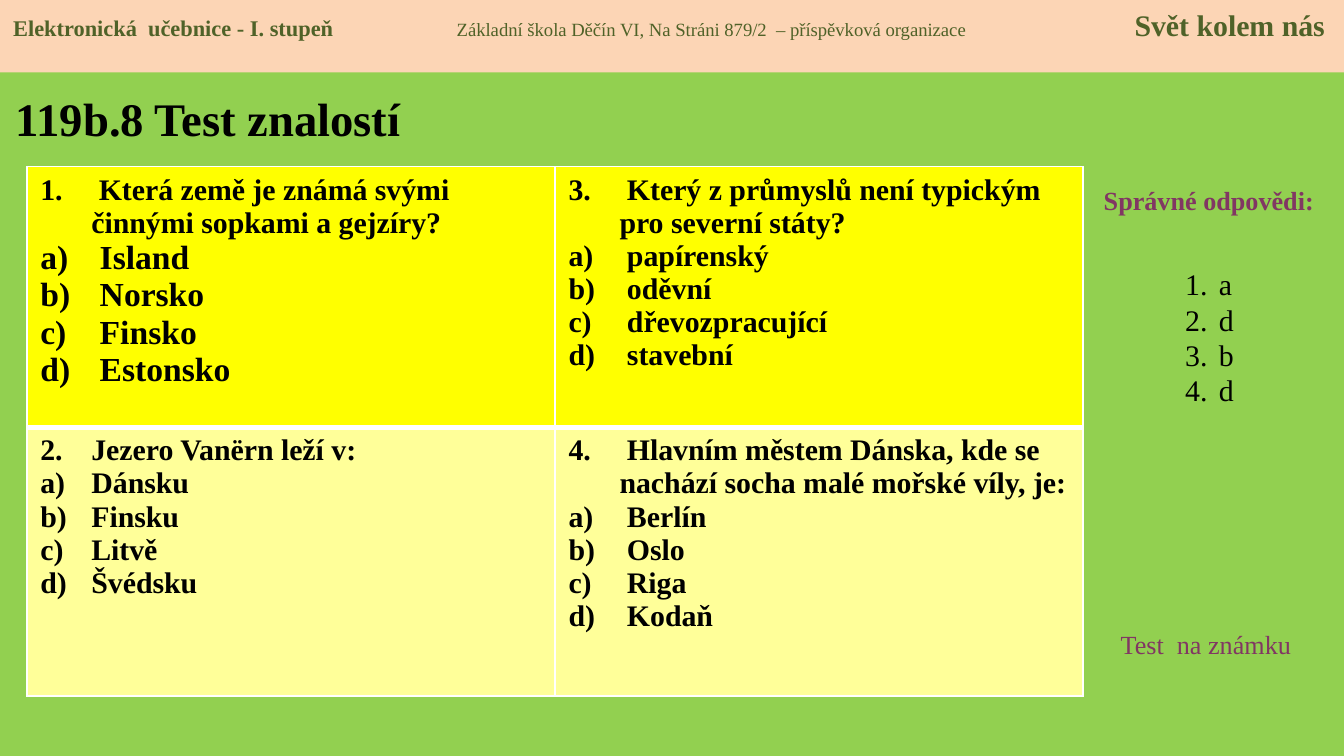
from dataclasses import dataclass

from lxml import etree
from pptx import Presentation
from pptx.dml.color import RGBColor
from pptx.enum.shapes import MSO_SHAPE
from pptx.enum.text import MSO_ANCHOR, PP_ALIGN
from pptx.oxml.ns import qn
from pptx.util import Inches, Pt

RECTANGLE = MSO_SHAPE.RECTANGLE
LEFT, CENTER = PP_ALIGN.LEFT, PP_ALIGN.CENTER
TOP, MIDDLE = MSO_ANCHOR.TOP, MSO_ANCHOR.MIDDLE


@dataclass(frozen=True)
class Theme:
    font: str = "Times New Roman"
    background: str = "92D050"
    band: str = "FCD5B5"
    band_text: str = "4F6228"
    text: str = "000000"
    accent: str = "813763"
    border: str = "FFFFFF"
    row_fills: tuple = ("FFFF00", "FFFF99")
    title_size: int = 25
    large_size: int = 18
    body_size: int = 16
    label_size: int = 14
    school_size: int = 10
    book_size: int = 12


THEME = Theme()

# Each question: wording, options, option size
QUESTIONS = [
    [
        (" Která země je známá svými činnými sopkami a gejzíry?",
         [" Island", " Norsko", " Finsko", " Estonsko"], THEME.large_size),
        (" Který z průmyslů není typickým pro severní státy?",
         [" papírenský", " oděvní", " dřevozpracující", " stavební"], THEME.body_size),
    ],
    [
        ("Jezero Vanërn leží v:",
         ["Dánsku", "Finsku", "Litvě", "Švédsku"], THEME.body_size),
        (" Hlavním městem Dánska, kde se nachází socha malé mořské víly, je:",
         [" Berlín", " Oslo", " Riga", " Kodaň"], THEME.body_size),
    ],
]
ANSWERS = ["a", "d", "b", "d"]


def add_run(paragraph, text, size, color=THEME.text, bold=False):
    run = paragraph.add_run()
    run.text = text
    run.font.name = THEME.font
    run.font.size = Pt(size)
    run.font.bold = bold
    run.font.color.rgb = RGBColor.from_string(color)


def set_number(paragraph, style, indent, start=1):
    properties = paragraph._p.get_or_add_pPr()
    properties.set("marL", str(Inches(indent)))
    properties.set("indent", str(-Inches(indent)))
    number = etree.SubElement(properties, qn("a:buAutoNum"), type=style)
    if start > 1:
        number.set("startAt", str(start))


def set_tabs(paragraph, stops):
    tabs = etree.SubElement(paragraph._p.get_or_add_pPr(), qn("a:tabLst"))
    for position, alignment in stops:
        etree.SubElement(tabs, qn("a:tab"), pos=str(Inches(position)), algn=alignment)


def set_borders(cell, top, bottom):
    properties = cell._tc.get_or_add_tcPr()
    widths = {"a:lnL": 1, "a:lnR": 1, "a:lnT": top, "a:lnB": bottom}
    for index, (tag, width) in enumerate(widths.items()):
        line = etree.Element(qn(tag), w=str(Pt(width)))
        fill = etree.SubElement(line, qn("a:solidFill"))
        etree.SubElement(fill, qn("a:srgbClr"), val=THEME.border)
        properties.insert(index, line)


def add_text_box(slide, box, wrap=True, anchor=TOP):
    text_frame = slide.shapes.add_textbox(*map(Inches, box)).text_frame
    text_frame.word_wrap = wrap
    text_frame.vertical_anchor = anchor
    return text_frame


def add_label(slide, box, text, size, color, bold=False, align=LEFT, anchor=TOP):
    paragraph = add_text_box(slide, box, anchor=anchor).paragraphs[0]
    paragraph.alignment = align
    add_run(paragraph, text, size, color, bold)


def add_header(slide, box):
    band = slide.shapes.add_shape(RECTANGLE, *map(Inches, box))
    band.shadow.inherit = False
    band.fill.solid()
    band.fill.fore_color.rgb = RGBColor.from_string(THEME.band)
    band.line.fill.background()
    band.text_frame.vertical_anchor = TOP
    paragraph = band.text_frame.paragraphs[0]
    paragraph.alignment = LEFT
    set_tabs(paragraph, [(3.3, "l"), (box[2] - 0.24, "r")])
    color = THEME.band_text
    add_run(paragraph, "Elektronická  učebnice - I. stupeň\t", THEME.book_size, color, True)
    add_run(paragraph, "Základní škola Děčín VI, Na Stráni 879/2  – příspěvková organizace\t",
            THEME.school_size, color)
    add_run(paragraph, "Svět kolem nás", THEME.body_size, color, True)


def fill_question(cell, number, question, options, option_size):
    paragraph = cell.text_frame.paragraphs[0]
    set_number(paragraph, "arabicPeriod", 0.38, number)
    add_run(paragraph, question, THEME.body_size, bold=True)
    for option in options:
        paragraph = cell.text_frame.add_paragraph()
        set_number(paragraph, "alphaLcParenR", 0.38)
        add_run(paragraph, option, option_size, bold=True)


def add_questions(slide, box):
    row_count, column_count = len(QUESTIONS), len(QUESTIONS[0])
    table = slide.shapes.add_table(row_count, column_count, *map(Inches, box)).table
    for row, height in zip(table.rows, (1.94, box[3] - 1.94)):
        row.height = Inches(height)
    for row_index, questions in enumerate(QUESTIONS):
        for column_index, question in enumerate(questions):
            cell = table.cell(row_index, column_index)
            cell.fill.solid()
            cell.fill.fore_color.rgb = RGBColor.from_string(THEME.row_fills[row_index])
            # A thick rule parts the two rows
            set_borders(cell, *((1, 3) if row_index == 0 else (3, 1)))
            # Questions are numbered down the columns
            fill_question(cell, column_index * row_count + row_index + 1, *question)


def add_answers(slide, box):
    left, top, width, height = box
    add_label(slide, (left, top, width, 0.34), "Správné odpovědi:",
              THEME.label_size, THEME.accent, bold=True, align=CENTER)
    # Numbered key
    text_frame = add_text_box(slide, (left + 0.67, top + 0.33, 0.55, 1.99), wrap=False)
    text_frame.margin_top = Inches(0.33)
    for index, answer in enumerate(ANSWERS):
        paragraph = text_frame.add_paragraph() if index else text_frame.paragraphs[0]
        set_number(paragraph, "arabicPeriod", 0.25)
        paragraph.line_spacing = Pt(19)
        add_run(paragraph, answer, THEME.body_size)
    # Closing note
    add_label(slide, (left + 0.19, top + height - 0.34, 1.57, 0.34), "Test  na známku",
              THEME.label_size, THEME.accent)


def main():
    presentation = Presentation()
    # Widescreen, 16 to 9
    presentation.slide_width = Inches(10)
    presentation.slide_height = Inches(10) * 9 // 16
    slide = presentation.slides.add_slide(presentation.slide_layouts[6])
    slide.background.fill.solid()
    slide.background.fill.fore_color.rgb = RGBColor.from_string(THEME.background)

    add_label(slide, (0.02, 0.55, 3.19, 0.65), "119b.8 Test znalostí",
              THEME.title_size, THEME.text, bold=True, anchor=MIDDLE)
    add_questions(slide, (0.2, 1.24, 7.86, 3.94))
    add_answers(slide, (8.05, 1.32, 1.89, 3.65))
    add_header(slide, (0, 0, 10, 0.54))
    presentation.save("out.pptx")


if __name__ == "__main__":
    main()
